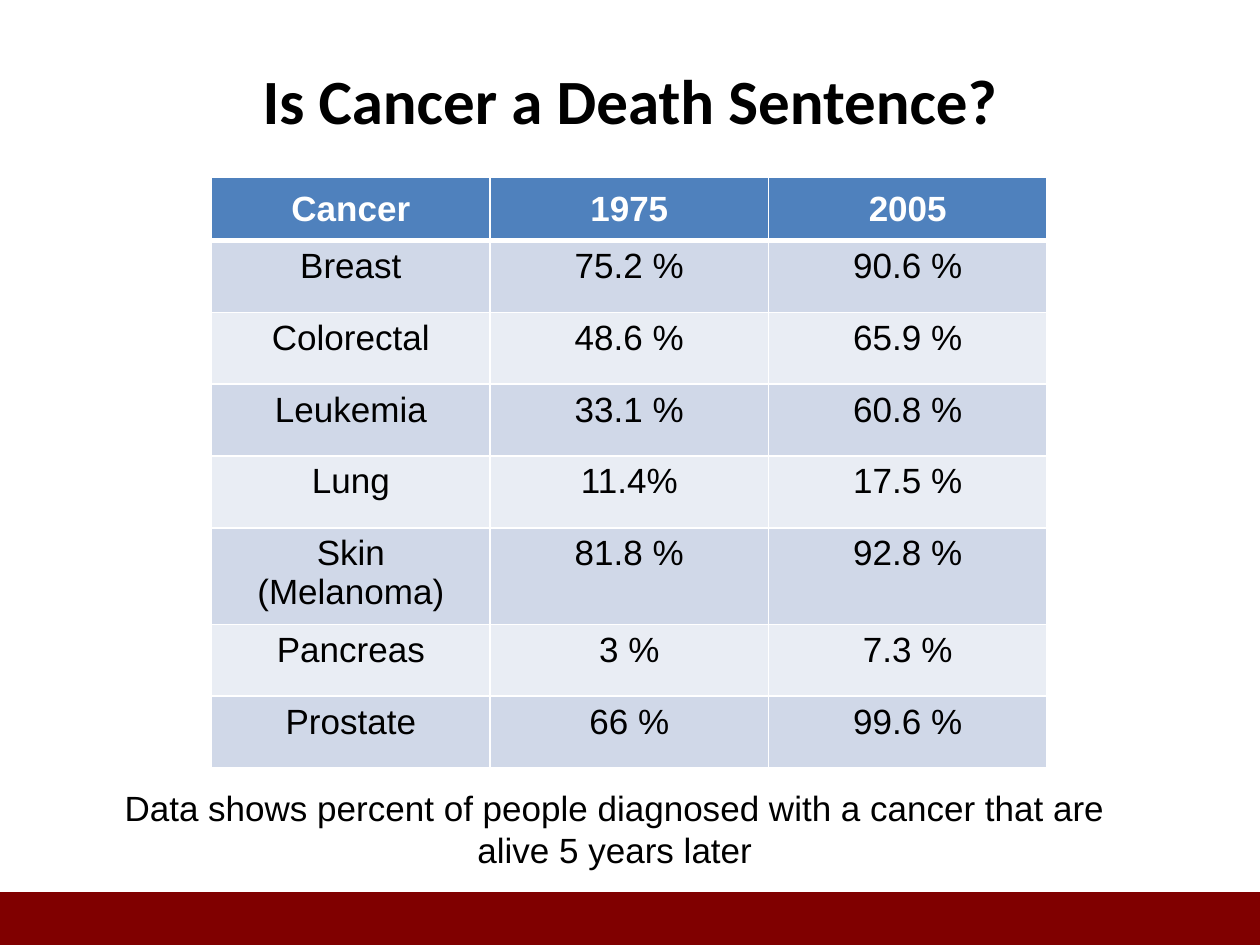
from lxml.etree import SubElement
from pptx import Presentation
from pptx.dml.color import RGBColor
from pptx.enum.shapes import MSO_SHAPE
from pptx.enum.text import MSO_ANCHOR, PP_ALIGN
from pptx.oxml.ns import qn
from pptx.util import Inches, Pt

WHITE = RGBColor(0xFF, 0xFF, 0xFF)
BLACK = RGBColor(0x00, 0x00, 0x00)
MAROON = RGBColor(0x80, 0x00, 0x00)
HEADER_BLUE = RGBColor(0x4F, 0x81, 0xBD)
BANDS = (RGBColor(0xE9, 0xED, 0xF4), RGBColor(0xD0, 0xD8, 0xE8))

WIDTH, HEIGHT = Inches(10), Inches(7.5)
COLUMN, HEADER_ROW, BODY_ROW = Inches(2.21), Inches(0.5), Inches(0.57)

SURVIVAL = [
    ("Cancer", "1975", "2005"),
    ("Breast", "75.2 %", "90.6 %"),
    ("Colorectal", "48.6 %", "65.9 %"),
    ("Leukemia", "33.1 %", "60.8 %"),
    ("Lung", "11.4%", "17.5 %"),
    ("Skin (Melanoma)", "81.8 %", "92.8 %"),
    ("Pancreas", "3 %", "7.3 %"),
    ("Prostate", "66 %", "99.6 %"),
]


def write(tf, text, size, color=BLACK, bold=False, font="Arial"):
    """Put one centred, formatted paragraph into a text frame."""
    tf.text = text
    tf.word_wrap = True
    p = tf.paragraphs[0]
    p.alignment = PP_ALIGN.CENTER
    f = p.runs[0].font
    f.name, f.size, f.bold = font, Pt(size), bold
    f.color.rgb = color


def add_text(s, box, text, size, anchor=MSO_ANCHOR.TOP, **style):
    """Add a text box at the given place in inches."""
    tf = s.shapes.add_textbox(*map(Inches, box)).text_frame
    write(tf, text, size, **style)
    tf.vertical_anchor = anchor


def add_footer_band(s):
    """Add the full-width band along the bottom edge."""
    top = Inches(7.08)
    sp = s.shapes.add_shape(MSO_SHAPE.RECTANGLE, 0, top, WIDTH, HEIGHT - top)
    sp.shadow.inherit = False
    sp.fill.solid()
    sp.fill.fore_color.rgb = MAROON
    sp.line.fill.background()


def set_borders(cell, **widths):
    """Draw white cell borders, with widths in points by side."""
    tc_pr = cell._tc.get_or_add_tcPr()
    for side, width in widths.items():
        ln = SubElement(tc_pr, qn(f"a:ln{side}"), w=str(Pt(width)))
        fill = SubElement(ln, qn("a:solidFill"))
        SubElement(fill, qn("a:srgbClr"), val=str(WHITE))


def add_survival_table(s):
    """Add the survival table with a header row and banded body rows."""
    rows, cols = len(SURVIVAL), len(SURVIVAL[0])
    height = HEADER_ROW + BODY_ROW * (rows - 1)
    table = s.shapes.add_table(rows, cols, Inches(1.68), Inches(1.41),
                               COLUMN * cols, height).table
    for column in table.columns:
        column.width = COLUMN
    for i, values in enumerate(SURVIVAL):
        header = i == 0
        table.rows[i].height = HEADER_ROW if header else BODY_ROW
        for j, value in enumerate(values):
            cell = table.cell(i, j)
            set_borders(cell, L=1, R=1, T=3 if i == 1 else 1, B=3 if header else 1)
            cell.fill.solid()
            cell.fill.fore_color.rgb = HEADER_BLUE if header else BANDS[i % 2]
            cell.vertical_anchor = MSO_ANCHOR.MIDDLE if header else MSO_ANCHOR.TOP
            write(cell.text_frame, value, 20, WHITE if header else BLACK, header)


def main():
    """Build the slide and save it."""
    prs = Presentation()
    prs.slide_width, prs.slide_height = WIDTH, HEIGHT
    s = prs.slides.add_slide(prs.slide_layouts[6])
    add_footer_band(s)
    add_text(s, (0.5, 0.16, 9, 1.25), "Is Cancer a Death Sentence?", 36,
             MSO_ANCHOR.MIDDLE, bold=True, font="Calibri")
    add_survival_table(s)
    add_text(s, (0.85, 6.19, 8.06, 0.77),
             "Data shows percent of people diagnosed with a cancer "
             "that are alive 5 years later", 20)
    prs.save("out.pptx")


if __name__ == "__main__":
    main()
